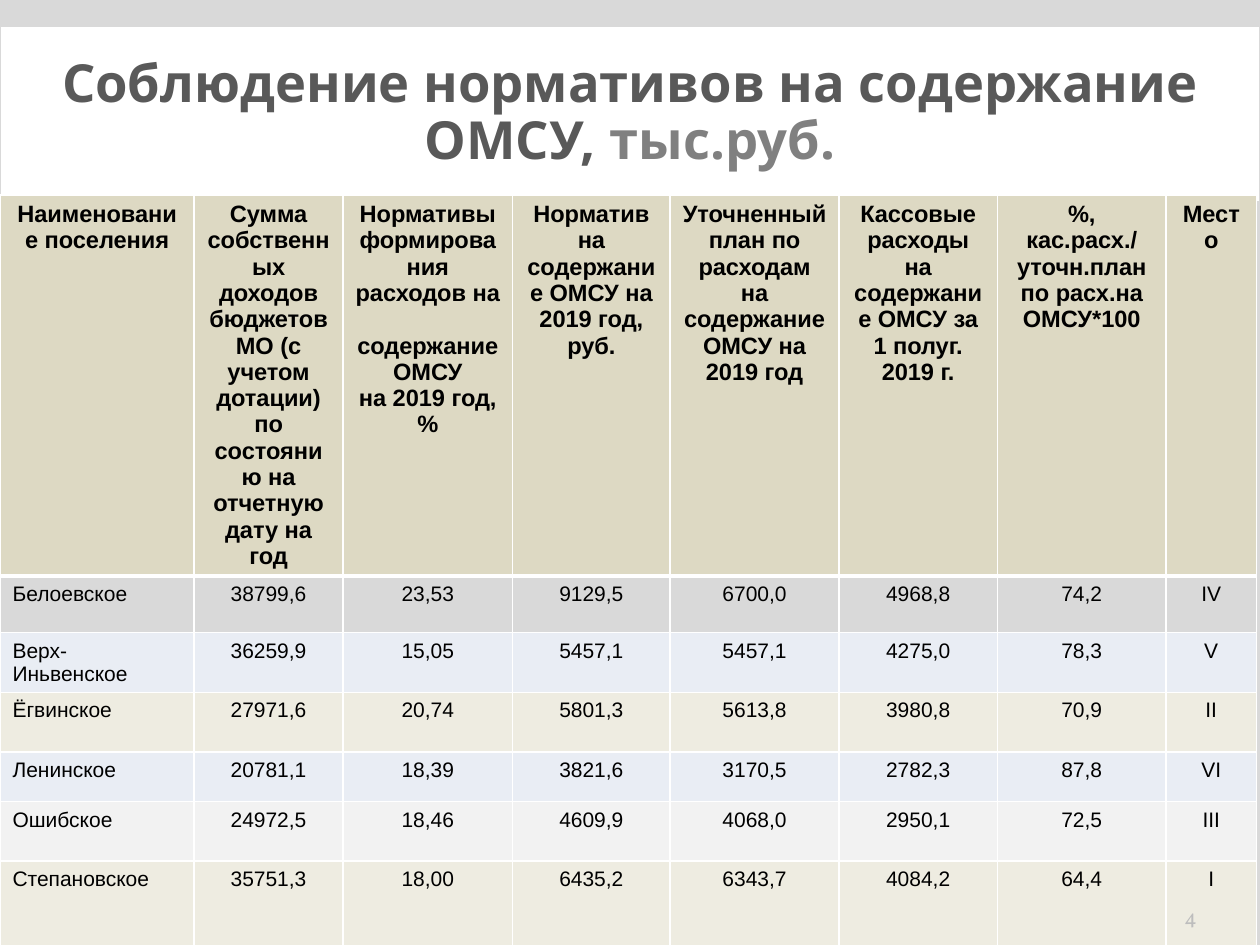
from typing import NamedTuple

from lxml.etree import SubElement
from pptx import Presentation
from pptx.dml.color import RGBColor
from pptx.enum.shapes import MSO_SHAPE
from pptx.enum.text import MSO_ANCHOR, PP_ALIGN
from pptx.oxml.ns import qn
from pptx.util import Pt


class Row(NamedTuple):
    fill: str
    high: float
    texts: list


BODY = {"name": "Arial", "size": Pt(12), "bold": False, "color": "000000"}
HEAD = {**BODY, "size": Pt(13.5), "bold": True}
TITLE = {"name": "Noto Sans", "size": Pt(30), "bold": True, "color": "595959"}
UNIT = {**TITLE, "color": "808080"}
PAGE = {"name": "Vollkorn", "size": Pt(12), "color": "BDBDBD"}

WIDTHS = [111, 85, 97, 90, 96.5, 90.5, 96.5, 51.5]
GAP = 15
ROWS = [
    Row("DDD9C3", 217, [
        "Наименование поселения",
        "Сумма собственных доходов бюджетов МО (с учетом дотации) "
        "по состоянию на отчетную дату на год",
        "Нормативы формирования расходов на\nсодержание ОМСУ\nна 2019 год,%",
        "Норматив на содержание ОМСУ на 2019 год, руб.",
        "Уточненный план по расходам на содержание ОМСУ на 2019 год",
        "Кассовые расходы на содержание ОМСУ за 1 полуг.\n2019 г.",
        "%, кас.расх./\nуточн.план по расх.на ОМСУ*100",
        "Место"]),
    Row("D9D9D9", 32.5, ["Белоевское", "38799,6", "23,53", "9129,5",
                         "6700,0", "4968,8", "74,2", "IV"]),
    Row("E9EDF4", 34, ["Верх-Иньвенское", "36259,9", "15,05", "5457,1",
                       "5457,1", "4275,0", "78,3", "V"]),
    Row("EEECE1", 34, ["Ёгвинское", "27971,6", "20,74", "5801,3",
                       "5613,8", "3980,8", "70,9", "II"]),
    Row("E9EDF4", 28.5, ["Ленинское", "20781,1", "18,39", "3821,6",
                         "3170,5", "2782,3", "87,8", "VI"]),
    Row("F2F2F2", 34, ["Ошибское", "24972,5", "18,46", "4609,9",
                       "4068,0", "2950,1", "72,5", "III"]),
    Row("EEECE1", 49, ["Степановское", "35751,3", "18,00", "6435,2",
                       "6343,7", "4084,2", "64,4", "I"]),
]


def paint(fill, tint: str) -> None:
    fill.solid()
    fill.fore_color.rgb = RGBColor.from_string(tint)


def write(para, text: str, form: dict) -> None:
    run = para.add_run()
    run.text = text
    for key, value in form.items():
        if key == "color":
            paint(run.font.fill, value)
        else:
            setattr(run.font, key, value)


def edge(cell, side: str, width: float) -> None:
    """Draw a white border on one side (L, R, T or B) of a cell."""
    line = SubElement(cell._tc.get_or_add_tcPr(), qn(f"a:ln{side}"),
                      w=str(Pt(width)))
    fill = SubElement(line, qn("a:solidFill"))
    SubElement(fill, qn("a:srgbClr"), val="FFFFFF")


def draw_title(slide) -> None:
    box = slide.shapes.add_shape(MSO_SHAPE.RECTANGLE, Pt(0), Pt(15),
                                 Pt(720), Pt(100))
    box.shadow.inherit = False
    paint(box.fill, "FFFFFF")
    paint(box.line.fill, "D9D9D9")
    box.line.width = Pt(0.75)
    box.text_frame.vertical_anchor = MSO_ANCHOR.MIDDLE
    para = box.text_frame.paragraphs[0]
    para.alignment = PP_ALIGN.CENTER
    para.line_spacing = 0.9
    write(para, "Соблюдение нормативов на содержание ОМСУ, ", TITLE)
    write(para, "тыс.руб.", UNIT)


def draw_cell(cell, text: str, top: int, left: int, tint: str) -> None:
    thick = {0: "B", 1: "T"}.get(top)
    for side in "LRTB":
        edge(cell, side, 3 if side == thick else 1)
    paint(cell.fill, tint)
    frame = cell.text_frame
    for i, part in enumerate(text.split("\n")):
        para = frame.add_paragraph() if i else frame.paragraphs[0]
        name = top > 0 and left == 0
        para.alignment = PP_ALIGN.LEFT if name else PP_ALIGN.CENTER
        if part.startswith("содержание"):
            para.space_before = Pt(GAP)
        write(para, part, BODY if top else HEAD)


def draw_table(slide) -> None:
    high = sum(row.high for row in ROWS)
    table = slide.shapes.add_table(len(ROWS), len(WIDTHS), Pt(0), Pt(111.5),
                                   Pt(sum(WIDTHS)), Pt(high)).table
    table.first_row = table.horz_banding = False
    for col, width in zip(table.columns, WIDTHS):
        col.width = Pt(width)
    for top, row in enumerate(ROWS):
        table.rows[top].height = Pt(row.high)
        for left, text in enumerate(row.texts):
            draw_cell(table.cell(top, left), text, top, left, row.fill)


def draw_page(slide) -> None:
    frame = slide.shapes.add_textbox(Pt(624), Pt(505.5), Pt(60),
                                     Pt(29)).text_frame
    frame.word_wrap = True
    frame.margin_left = frame.margin_right = Pt(0)
    frame.vertical_anchor = MSO_ANCHOR.BOTTOM
    para = frame.paragraphs[0]
    para.alignment = PP_ALIGN.RIGHT
    write(para, "4", PAGE)


def main() -> None:
    deck = Presentation()
    deck.slide_width, deck.slide_height = Pt(720), Pt(540)
    slide = deck.slides.add_slide(deck.slide_layouts[6])
    paint(slide.background.fill, "D9D9D9")
    draw_title(slide)
    draw_table(slide)
    draw_page(slide)
    deck.save("out.pptx")


if __name__ == "__main__":
    main()
